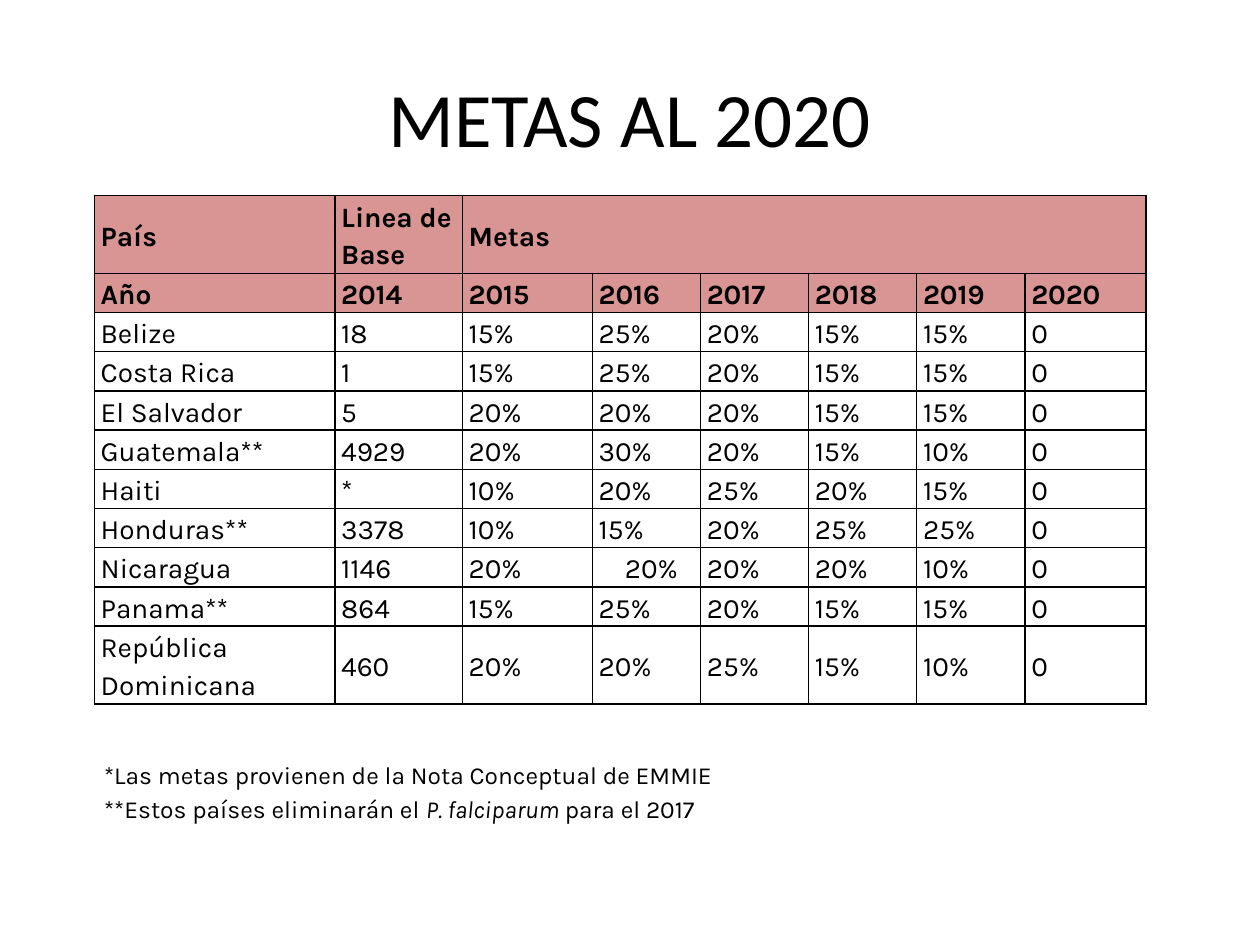
from lxml import etree
from pptx import Presentation
from pptx.dml.color import RGBColor
from pptx.enum.text import MSO_ANCHOR, MSO_AUTO_SIZE, PP_ALIGN
from pptx.oxml.ns import qn
from pptx.util import Cm, Pt

MIDDLE = MSO_ANCHOR.MIDDLE
CENTER, JUSTIFY = PP_ALIGN.CENTER, PP_ALIGN.JUSTIFY
FIT_SHAPE = MSO_AUTO_SIZE.SHAPE_TO_FIT_TEXT
BLACK = RGBColor(0x00, 0x00, 0x00)
ROSE = RGBColor(0xD9, 0x95, 0x94)

# Content
TITLE = "METAS AL 2020"
HEADERS = [
    ["País", "Linea de Base", "Metas", "", "", "", "", ""],
    ["Año", "2014", "2015", "2016", "2017", "2018", "2019", "2020"],
]
COUNTRIES = [
    ["Belize", "18", "15%", "25%", "20%", "15%", "15%", "0"],
    ["Costa Rica", "1", "15%", "25%", "20%", "15%", "15%", "0"],
    ["El Salvador", "5", "20%", "20%", "20%", "15%", "15%", "0"],
    ["Guatemala**", "4929", "20%", "30%", "20%", "15%", "10%", "0"],
    ["Haiti", "*", "10%", "20%", "25%", "20%", "15%", "0"],
    ["Honduras**", "3378", "10%", "15%", "20%", "25%", "25%", "0"],
    ["Nicaragua", "1146", "20%", "20%", "20%", "20%", "10%", "0"],
    ["Panama**", "864", "15%", "25%", "20%", "15%", "15%", "0"],
    ["República Dominicana", "460", "20%", "20%", "25%", "15%", "10%", "0"],
]
# Each note is a list of (text, italic)
NOTES = [
    [("*Las metas provienen de la Nota Conceptual de EMMIE", False)],
    [("**Estos países eliminarán el ", False), ("P. falciparum ", True),
     ("para el 2017", False)],
]

# Layout in centimetres
COLUMN_WIDTHS = [4.85, 2.57, 2.62] + [2.18] * 4 + [2.44]
SINGLE_ROW, DOUBLE_ROW = 0.79, 1.57
CELL_FORMAT = {"vertical_anchor": MIDDLE, "margin_left": Cm(0.13),
               "margin_right": Cm(0.13), "margin_top": 0, "margin_bottom": 0}
INDENTED_CELL, INDENTED_MARGIN = ("Nicaragua", 3), Cm(0.66)


def set_font(font, size, name="Karla", bold=False, italic=False):
    values = {"size": Pt(size), "name": name, "bold": bold, "italic": italic}
    for key, value in values.items():
        setattr(font, key, value)
    font.color.rgb = BLACK


def add_borders(cell):
    properties = cell._tc.get_or_add_tcPr()
    for side in ("lnL", "lnR", "lnT", "lnB"):
        line = etree.SubElement(properties, qn(f"a:{side}"), w=str(Pt(1)))
        fill = etree.SubElement(line, qn("a:solidFill"))
        etree.SubElement(fill, qn("a:srgbClr"), val=str(BLACK))


def fill_cell(cell, text, header):
    for key, value in CELL_FORMAT.items():
        setattr(cell, key, value)
    add_borders(cell)
    if header:
        cell.fill.solid()
        cell.fill.fore_color.rgb = ROSE
    else:
        cell.fill.background()
    paragraph = cell.text_frame.paragraphs[0]
    paragraph.line_spacing = 1.15
    set_font(paragraph.font, 16, bold=header)
    if text:
        run = paragraph.add_run()
        run.text = text
        set_font(run.font, 16, bold=header)


def add_title(slide):
    title = slide.shapes.title
    title.left, title.top = Cm(1.27), Cm(0.76)
    title.width, title.height = Cm(22.86), Cm(3.18)
    title.text_frame.text = TITLE
    title.text_frame.vertical_anchor = MIDDLE
    heading = title.text_frame.paragraphs[0]
    heading.alignment = CENTER
    set_font(heading.runs[0].font, 44, "Calibri")


def add_goals(slide):
    rows = HEADERS + COUNTRIES
    heights = [DOUBLE_ROW] + [SINGLE_ROW] * (len(rows) - 2) + [DOUBLE_ROW]
    goals = slide.shapes.add_table(
        len(rows), len(COLUMN_WIDTHS), Cm(1.9), Cm(3.94),
        Cm(sum(COLUMN_WIDTHS)), Cm(sum(heights))).table
    goals.first_row = goals.horz_banding = False
    for column, width in zip(goals.columns, COLUMN_WIDTHS):
        column.width = Cm(width)
    for r, (texts, height) in enumerate(zip(rows, heights)):
        goals.rows[r].height = Cm(height)
        for c, text in enumerate(texts):
            cell = goals.cell(r, c)
            fill_cell(cell, text, r < len(HEADERS))
            if (texts[0], c) == INDENTED_CELL:
                cell.margin_left = INDENTED_MARGIN
    goals.cell(0, 2).merge(goals.cell(0, len(COLUMN_WIDTHS) - 1))


def add_notes(slide):
    box = slide.shapes.add_textbox(Cm(1.85), Cm(15.11), Cm(19.74), Cm(1.63))
    frame = box.text_frame
    frame.word_wrap = True
    frame.auto_size = FIT_SHAPE
    for i, note in enumerate(NOTES):
        paragraph = frame.add_paragraph() if i else frame.paragraphs[0]
        paragraph.alignment = JUSTIFY
        paragraph.line_spacing = 1.15
        for text, italic in note:
            run = paragraph.add_run()
            run.text = text
            set_font(run.font, 14, italic=italic)


def main():
    deck = Presentation()
    deck.slide_width, deck.slide_height = Cm(25.4), Cm(19.05)
    slide = deck.slides.add_slide(deck.slide_layouts[5])
    add_title(slide)
    add_goals(slide)
    add_notes(slide)
    deck.save("out.pptx")


if __name__ == "__main__":
    main()
